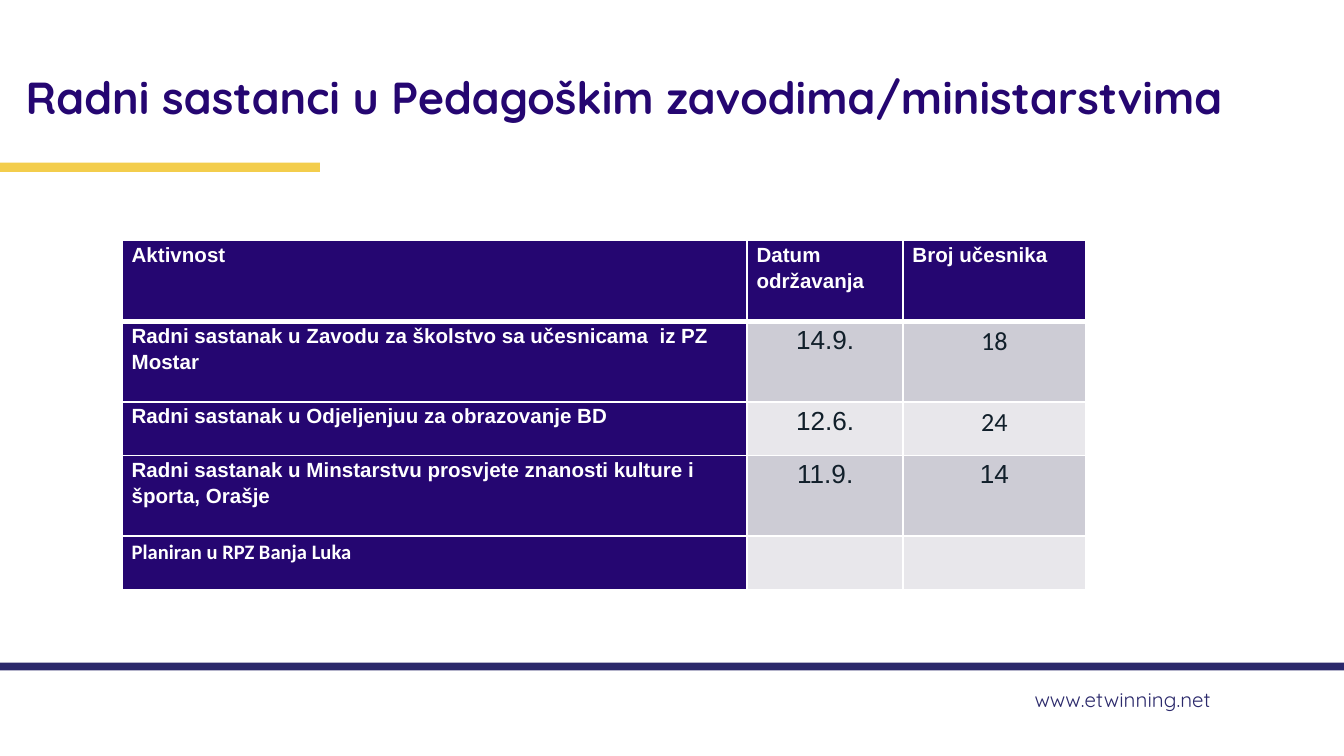
from lxml import etree
from pptx import Presentation
from pptx.dml.color import RGBColor
from pptx.enum.shapes import MSO_SHAPE
from pptx.enum.text import MSO_ANCHOR, MSO_AUTO_SIZE, PP_ALIGN
from pptx.oxml.ns import qn
from pptx.util import Inches, Pt

RECT = MSO_SHAPE.RECTANGLE
TOP = MSO_ANCHOR.TOP
NO_FIT = MSO_AUTO_SIZE.NONE
LEFT, CENTER, RIGHT = PP_ALIGN.LEFT, PP_ALIGN.CENTER, PP_ALIGN.RIGHT

WHITE = RGBColor(0xFF, 0xFF, 0xFF)
PURPLE = RGBColor(0x25, 0x06, 0x71)
NAVY = RGBColor(0x2B, 0x29, 0x6B)
YELLOW = RGBColor(0xF3, 0xCD, 0x4C)
INK = RGBColor(0x11, 0x1F, 0x2A)
BANDS = [RGBColor(0xCD, 0xCC, 0xD5), RGBColor(0xE8, 0xE7, 0xEB)]

SLIDE_W = 10
SLIDE_H = SLIDE_W * 9 / 16
COLS = [4.65, 1.16, 1.36]
ROWS = [0.6, 0.6, 0.4, 0.6, 0.4]
SIDES = ["L", "R", "T", "B"]

TITLE = dict(name="Quicksand", size=Pt(24), bold=True, color=PURPLE)
FOOTER = dict(name="Quicksand", size=Pt(11), bold=False, color=NAVY)
LABEL = dict(name="Arial", size=Pt(11), bold=True, color=WHITE)
VALUE = dict(name="Arial", size=Pt(14), bold=False, color=INK)
CALIBRI = dict(name="Calibri")

TABLE = [
    [("Aktivnost", {}), ("Datum održavanja", {}), ("Broj učesnika", {})],
    [("Radni sastanak u Zavodu za školstvo sa učesnicama  iz PZ Mostar", {}),
     ("14.9.", {}), ("18", CALIBRI)],
    [("Radni sastanak u Odjeljenjuu za obrazovanje BD", {}),
     ("12.6.", {}), ("24", CALIBRI)],
    [("Radni sastanak u Minstarstvu prosvjete znanosti kulture i športa, Orašje", {}),
     ("11.9.", {}), ("14", {})],
    [("Planiran u RPZ Banja Luka", CALIBRI), ("", {}), ("", {})],
]


def set_text(tf, text, style, align=LEFT, spacing=1.0):
    p = tf.paragraphs[0]
    p.alignment = align
    p.line_spacing = spacing
    r = p.add_run()
    r.text = text
    for key, value in style.items():
        if key == "color":
            r.font.color.rgb = value
        else:
            setattr(r.font, key, value)


def set_frame(tf, side, edge):
    frame = dict(margin_left=Inches(side), margin_right=Inches(side),
                 margin_top=Inches(edge), margin_bottom=Inches(edge),
                 word_wrap=True, auto_size=NO_FIT, vertical_anchor=TOP)
    for key, value in frame.items():
        setattr(tf, key, value)


def add_title(s, text):
    sp = s.shapes.title
    sp.left, sp.top, sp.width, sp.height = map(Inches, (0.12, 0.45, 9.69, 0.63))
    set_frame(sp.text_frame, 0.07, 0.07)
    set_text(sp.text_frame, text, TITLE)


def add_bar(s, top, width, height, color):
    sp = s.shapes.add_shape(RECT, 0, Inches(top), Inches(width), Inches(height))
    sp.shadow.inherit = False
    sp.fill.solid()
    sp.fill.fore_color.rgb = color
    sp.line.fill.background()


def add_footer(s, text):
    sp = s.shapes.add_textbox(*map(Inches, (7.5, 5.09, 1.58, 0.27)))
    set_frame(sp.text_frame, 0.07, 0.04)
    set_text(sp.text_frame, text, FOOTER, RIGHT, 0.9)


def set_borders(cell, widths):
    tc_pr = cell._tc.get_or_add_tcPr()
    for i, (side, width) in enumerate(zip(SIDES, widths)):
        ln = etree.Element(qn(f"a:ln{side}"), w=str(Pt(width)))
        fill = etree.SubElement(ln, qn("a:solidFill"))
        etree.SubElement(fill, qn("a:srgbClr"), val=str(WHITE))
        tc_pr.insert(i, ln)


def format_cell(cell, row, col, text, changes):
    is_label = row == 0 or col == 0
    cell.margin_left = cell.margin_right = Inches(0.07)
    cell.margin_top = cell.margin_bottom = 0
    cell.fill.solid()
    cell.fill.fore_color.rgb = PURPLE if is_label else BANDS[(row - 1) % 2]
    set_borders(cell, [1, 1, 3 if row == 1 else 1, 3 if row == 0 else 1])
    if text:
        style = {**(LABEL if is_label else VALUE), **changes}
        set_text(cell.text_frame, text, style, LEFT if is_label else CENTER, 1.15)


def add_meetings(s):
    table = s.shapes.add_table(len(ROWS), len(COLS), Inches(0.91), Inches(1.79),
                               Inches(sum(COLS)), Inches(sum(ROWS))).table
    for column, width in zip(table.columns, COLS):
        column.width = Inches(width)
    for row, height in zip(table.rows, ROWS):
        row.height = Inches(height)
    for i, cells in enumerate(TABLE):
        for j, (text, changes) in enumerate(cells):
            format_cell(table.cell(i, j), i, j, text, changes)


def main():
    prs = Presentation()
    prs.slide_width, prs.slide_height = Inches(SLIDE_W), Inches(SLIDE_H)
    s = prs.slides.add_slide(prs.slide_layouts[5])
    add_footer(s, "www.etwinning.net")
    add_bar(s, 4.93, SLIDE_W, 0.06, NAVY)
    add_bar(s, 1.21, 2.38, 0.07, YELLOW)
    add_title(s, "Radni sastanci u Pedagoškim zavodima/ministarstvima")
    add_meetings(s)
    prs.save("out.pptx")


if __name__ == "__main__":
    main()
